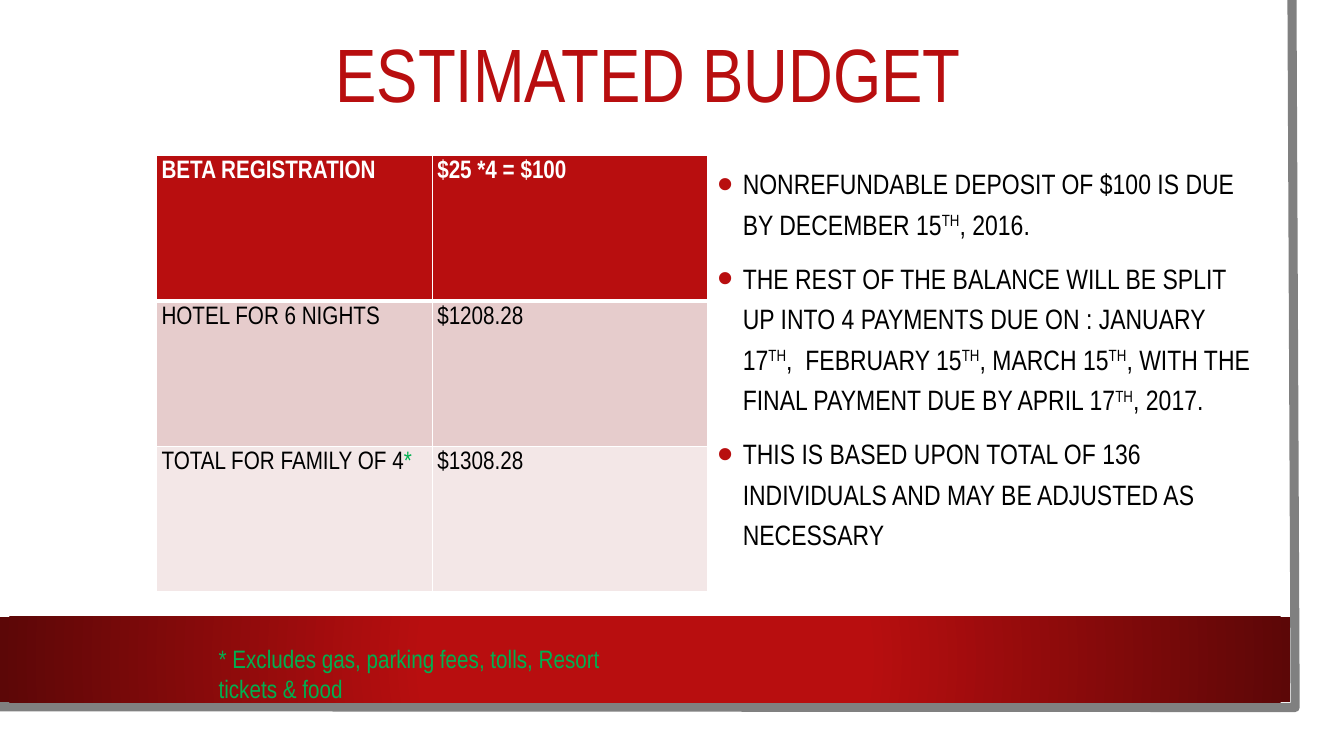
from dataclasses import dataclass

from lxml import etree
from pptx import Presentation
from pptx.dml.color import RGBColor
from pptx.enum.shapes import MSO_SHAPE
from pptx.enum.text import MSO_ANCHOR, PP_ALIGN
from pptx.oxml import parse_xml
from pptx.oxml.ns import qn
from pptx.util import Cm, Pt

RECTANGLE = MSO_SHAPE.RECTANGLE
TOP, MIDDLE = MSO_ANCHOR.TOP, MSO_ANCHOR.MIDDLE
LEFT, CENTER = PP_ALIGN.LEFT, PP_ALIGN.CENTER

FONT = "Arial Narrow"
RED, DARK_RED, GREEN = "B80E0F", "5C0707", "00B050"
WHITE, BLACK, GRAY = "FFFFFF", "000000", "808080"
DRAWING_NS = "http://schemas.openxmlformats.org/drawingml/2006/main"


@dataclass
class Piece:
    text: str
    color: str = BLACK
    bold: bool = False
    superscript: bool = False


@dataclass
class BudgetRow:
    fill: str
    item: list[Piece]
    amount: list[Piece]


@dataclass
class Box:
    left: float
    top: float
    width: float
    height: float

    def lengths(self) -> tuple:
        return Cm(self.left), Cm(self.top), Cm(self.width), Cm(self.height)


TH = Piece("TH", superscript=True)

BUDGET = [
    BudgetRow(RED, [Piece("BETA REGISTRATION", WHITE, True)],
              [Piece("$25 *4 = $100", WHITE, True)]),
    BudgetRow("E6CCCC", [Piece("HOTEL FOR 6 NIGHTS")], [Piece("$1208.28")]),
    BudgetRow("F3E7E7", [Piece("TOTAL FOR FAMILY OF 4"), Piece("*", GREEN)],
              [Piece("$1308.28")]),
]

TERMS = [
    [Piece("NONREFUNDABLE DEPOSIT OF $100 IS DUE BY DECEMBER 15"), TH, Piece(", 2016.")],
    [Piece("THE REST OF THE BALANCE WILL BE SPLIT UP INTO 4 PAYMENTS DUE ON : JANUARY 17"),
     TH, Piece(",  FEBRUARY 15"), TH, Piece(", MARCH 15"), TH,
     Piece(", WITH THE FINAL PAYMENT DUE BY APRIL 17"), TH, Piece(", 2017.")],
    [Piece("THIS IS BASED UPON TOTAL OF 136 INDIVIDUALS AND MAY BE ADJUSTED AS NECESSARY")],
]


def rgb(color: str) -> RGBColor:
    return RGBColor.from_string(color)


def add_pieces(paragraph, pieces: list[Piece], size: float) -> None:
    for piece in pieces:
        run = paragraph.add_run()
        run.text = piece.text
        run.font.name = FONT
        run.font.size = Pt(size)
        run.font.bold = piece.bold
        run.font.color.rgb = rgb(piece.color)
        if piece.superscript:
            run.font._element.set("baseline", "30000")


def add_text(slide, box: Box, paragraphs: list[list[Piece]], size: float, *,
             align=LEFT, anchor=TOP, line_spacing: float = 1.0,
             bulleted: bool = False) -> None:
    frame = slide.shapes.add_textbox(*box.lengths()).text_frame
    frame.word_wrap = True
    frame.vertical_anchor = anchor
    for index, pieces in enumerate(paragraphs):
        paragraph = frame.add_paragraph() if index else frame.paragraphs[0]
        if bulleted:
            add_bullet(paragraph)
        paragraph.alignment = align
        paragraph.line_spacing = line_spacing
        if index:
            paragraph.space_before = Pt(10)
        add_pieces(paragraph, pieces, size)


def add_bullet(paragraph) -> None:
    properties = paragraph._p.get_or_add_pPr()
    indent = Cm(0.64)
    properties.set("marL", str(indent))
    properties.set("indent", str(-indent))
    color = etree.SubElement(properties, qn("a:buClr"))
    etree.SubElement(color, qn("a:srgbClr"), val=RED)
    etree.SubElement(properties, qn("a:buSzPct"), val="160000")
    etree.SubElement(properties, qn("a:buFont"), typeface="Arial")
    etree.SubElement(properties, qn("a:buChar"), char="•")


def add_panel(slide, box: Box, color: str):
    panel = slide.shapes.add_shape(RECTANGLE, *box.lengths())
    panel.shadow.inherit = False
    panel.fill.solid()
    panel.fill.fore_color.rgb = rgb(color)
    panel.line.fill.background()
    return panel


def set_radial_gradient(shape, inner: str, outer: str) -> None:
    properties = shape._element.spPr
    solid = properties.find(qn("a:solidFill"))
    gradient = parse_xml(
        f'<a:gradFill xmlns:a="{DRAWING_NS}" rotWithShape="1"><a:gsLst>'
        f'<a:gs pos="34000"><a:srgbClr val="{inner}"/></a:gs>'
        f'<a:gs pos="100000"><a:srgbClr val="{outer}"/></a:gs></a:gsLst>'
        '<a:path path="circle"><a:fillToRect l="50000" t="50000" r="50000" b="50000"/>'
        '</a:path></a:gradFill>')
    properties.replace(solid, gradient)


def add_page_edge(slide) -> None:
    corners = [(32.56, 0), (32.64, 17.83), (-0.08, 17.81)]
    points = [(Cm(x), Cm(y)) for x, y in corners]
    builder = slide.shapes.build_freeform(*points[0])
    builder.add_line_segments(points[1:], close=False)
    edge = builder.convert_to_shape()
    edge.shadow.inherit = False
    edge.fill.background()
    edge.line.color.rgb = rgb(GRAY)
    edge.line.width = Pt(6.5)


def set_border(cell, side: str, width: float) -> None:
    line = etree.SubElement(cell._tc.get_or_add_tcPr(), qn(f"a:ln{side}"),
                            w=str(Pt(width)))
    fill = etree.SubElement(line, qn("a:solidFill"))
    etree.SubElement(fill, qn("a:srgbClr"), val=WHITE)


def add_budget_table(slide, box: Box) -> None:
    table = slide.shapes.add_table(len(BUDGET), 2, *box.lengths()).table
    table.horz_banding = False
    for row_index, row in enumerate(BUDGET):
        for column_index, pieces in enumerate((row.item, row.amount)):
            cell = table.cell(row_index, column_index)
            cell.margin_left = cell.margin_right = Cm(0.13)
            cell.margin_top = cell.margin_bottom = Cm(0.13)
            # The rule under the header row is heavier
            widths = {"L": 1, "R": 1, "T": 3 if row_index == 1 else 1,
                      "B": 3 if row_index == 0 else 1}
            for side, width in widths.items():
                set_border(cell, side, width)
            cell.fill.solid()
            cell.fill.fore_color.rgb = rgb(row.fill)
            add_pieces(cell.text_frame.paragraphs[0], pieces, 18)


def main() -> None:
    presentation = Presentation()
    presentation.slide_width = Cm(33.87)
    presentation.slide_height = Cm(19.05)
    slide = presentation.slides.add_slide(presentation.slide_layouts[6])

    # Page backdrop and red band
    add_panel(slide, Box(0, 0, 33.27, 18.47), WHITE)
    add_page_edge(slide)
    band = add_panel(slide, Box(0, 15.54, 32.51, 2.16), RED)
    set_radial_gradient(band, RED, DARK_RED)

    # Title
    add_text(slide, Box(1.9, 0.36, 28.88, 3.23), [[Piece("ESTIMATED BUDGET", RED)]], 54,
             align=CENTER, anchor=MIDDLE, line_spacing=0.9)

    # Costs and payment terms
    add_budget_table(slide, Box(3.94, 3.91, 13.9, 11))
    add_text(slide, Box(17.83, 3.91, 14.12, 9.19), TERMS, 20,
             line_spacing=1.2, bulleted=True)

    # Footnote
    footnote = "* Excludes gas, parking fees, tolls, Resort tickets & food"
    add_text(slide, Box(5.26, 16.08, 10.16, 1.8), [[Piece(footnote, GREEN)]], 18)

    presentation.save("out.pptx")


if __name__ == "__main__":
    main()
